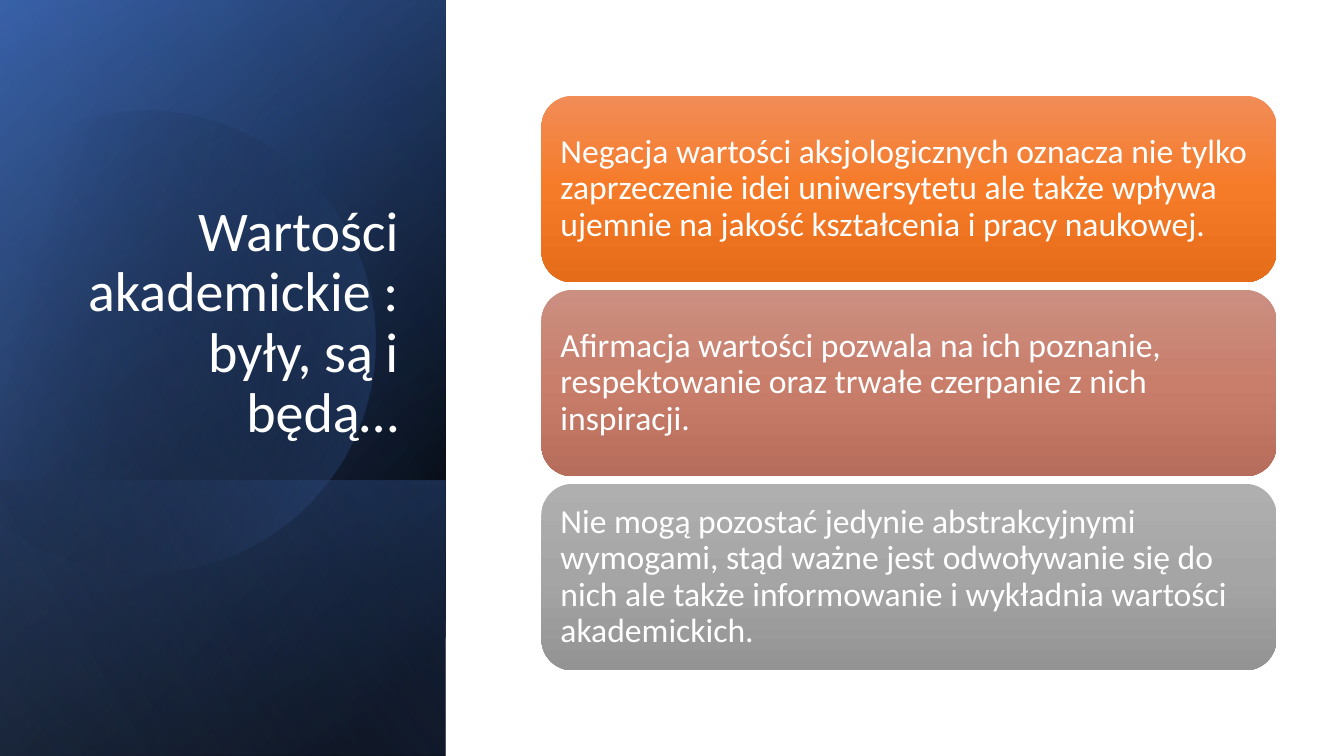
from dataclasses import dataclass

from lxml.etree import SubElement
from pptx import Presentation
from pptx.dml.color import RGBColor
from pptx.enum.shapes import MSO_SHAPE as SHAPE
from pptx.enum.text import MSO_ANCHOR as ANCHOR, PP_ALIGN as ALIGN
from pptx.oxml import parse_xml
from pptx.oxml.ns import nsdecls, qn

PX = 9144
PANEL_W, SLIDE_W, SLIDE_H = 442, 1333, 750
BAND_Y = 477
CARD_X, CARD_W, CARD_H = 537, 729, 185
CARDS_TOP, CARDS_BOTTOM = 95, 665


@dataclass(frozen=True)
class Theme:
    font: str = "Calibri"
    title_size: int = 40
    card_size: int = 24
    text: str = "FFFFFF"
    black: str = "000000"
    blue: str = "4472C4"
    deep_blue: str = "2F5597"
    pale_blue: str = "8FAADC"
    orange: tuple = ("F18C57", "F67B28", "E56C19")
    terracotta: tuple = ("CB8F81", "C97E6B", "B76D5B")
    grey: tuple = ("AFAFAF", "A5A5A5", "939393")


THEME = Theme()

TITLE = "Wartości akademickie : były, są i będą…"
CARDS = [
    ("Negacja wartości aksjologicznych oznacza nie tylko zaprzeczenie idei "
     "uniwersytetu ale także wpływa ujemnie na jakość kształcenia i pracy naukowej.",
     THEME.orange),
    ("Afirmacja wartości pozwala na ich poznanie, respektowanie oraz trwałe "
     "czerpanie z nich inspiracji.", THEME.terracotta),
    ("Nie mogą pozostać jedynie abstrakcyjnymi wymogami, stąd ważne jest "
     "odwoływanie się do nich ale także informowanie i wykładnia wartości "
     "akademickich.", THEME.grey),
]

DISC_ORIGIN, DISC_ROTATION = (-55, 106), 343.9
DISC_START = (267, 10)
DISC_SEGMENTS = [
    [(359, 39), (427, 126), (427, 228)],
    [(427, 355), (324, 457), (198, 457)],
    [(119, 457), (49, 417), (9, 356)],
    [(0, 342)],
    [(91, 27)],
    [(109, 18)],
    [(137, 6), (167, 0), (198, 0)],
    [(222, 0), (245, 4), (267, 10)],
]


def emu(*px):
    return [round(v * PX) for v in px]


def paint(sp, stops, angle):
    gs = "".join(
        f'<a:gs pos="{pos * 1000}"><a:srgbClr val="{color}">'
        f'<a:alpha val="{alpha * 1000}"/></a:srgbClr></a:gs>'
        for pos, color, alpha in stops)
    grad = parse_xml(
        f'<a:gradFill {nsdecls("a")} rotWithShape="1"><a:gsLst>{gs}</a:gsLst>'
        f'<a:lin ang="{angle * 60000}" scaled="0"/></a:gradFill>')
    sp.fill.background()
    spPr = sp._element.spPr
    spPr.replace(spPr.find(qn("a:noFill")), grad)
    sp.line.fill.background()
    sp.shadow.inherit = False


def add_panel(s, y, h, stops, angle):
    sp = s.shapes.add_shape(SHAPE.RECTANGLE, *emu(0, y, PANEL_W, h))
    paint(sp, stops, angle)


def bend(sp, segments):
    outline = next(sp._element.iter(qn("a:moveTo"))).getparent()
    lines = iter(outline.findall(qn("a:lnTo")))
    for segment in segments:
        steps = [next(lines) for _ in segment]
        if len(steps) == 3:
            curve = SubElement(outline, qn("a:cubicBezTo"))
            steps[0].addprevious(curve)
            for step in steps:
                curve.append(step[0])
                outline.remove(step)


def add_disc(s, stops, angle):
    builder = s.shapes.build_freeform(*emu(*DISC_START))
    points = [emu(*point) for segment in DISC_SEGMENTS for point in segment]
    builder.add_line_segments(points, close=True)
    sp = builder.convert_to_shape(*emu(*DISC_ORIGIN))
    bend(sp, DISC_SEGMENTS)
    sp.rotation = DISC_ROTATION
    paint(sp, stops, angle)


def set_text(sp, text, size, align, anchor):
    tf = sp.text_frame
    tf.text = text
    tf.word_wrap = True
    tf.vertical_anchor = anchor
    p = tf.paragraphs[0]
    p.alignment = align
    p.line_spacing = 0.9
    font = p.runs[0].font
    font.name = THEME.font
    font.size = size * 12700
    font.color.rgb = RGBColor.from_string(THEME.text)


def add_title(s):
    sp = s.shapes.add_textbox(*emu(64, 184, 341, 262))
    set_text(sp, TITLE, THEME.title_size, ALIGN.RIGHT, ANCHOR.BOTTOM)


def add_card(s, y, text, colors):
    sp = s.shapes.add_shape(SHAPE.ROUNDED_RECTANGLE, *emu(CARD_X, y, CARD_W, CARD_H))
    paint(sp, [(pos, c, 100) for pos, c in zip((0, 50, 100), colors)], 90)
    tf = sp.text_frame
    tf.margin_left, tf.margin_top, tf.margin_right, tf.margin_bottom = emu(10, 10, 10, 10)
    set_text(sp, text, THEME.card_size, ALIGN.LEFT, ANCHOR.MIDDLE)


def main():
    prs = Presentation()
    prs.slide_width, prs.slide_height = emu(SLIDE_W, SLIDE_H)
    s = prs.slides.add_slide(prs.slide_layouts[6])
    t = THEME
    add_panel(s, 0, SLIDE_H, [(8, t.black, 100), (100, t.deep_blue, 100)], 220)
    add_panel(s, 0, SLIDE_H, [(0, t.black, 0), (99, t.blue, 46)], 240)
    add_panel(s, BAND_Y, SLIDE_H - BAND_Y, [(2, t.blue, 29), (100, t.black, 30)], 140)
    add_disc(s, [(29, t.black, 0), (100, t.blue, 43)], 30)
    add_panel(s, 0, SLIDE_H, [(0, t.black, 0), (99, t.pale_blue, 11)], 150)
    add_title(s)
    pitch = (CARDS_BOTTOM - CARDS_TOP - CARD_H) / (len(CARDS) - 1)
    for i, (text, colors) in enumerate(CARDS):
        add_card(s, CARDS_TOP + i * pitch, text, colors)
    prs.save("out.pptx")


if __name__ == "__main__":
    main()
